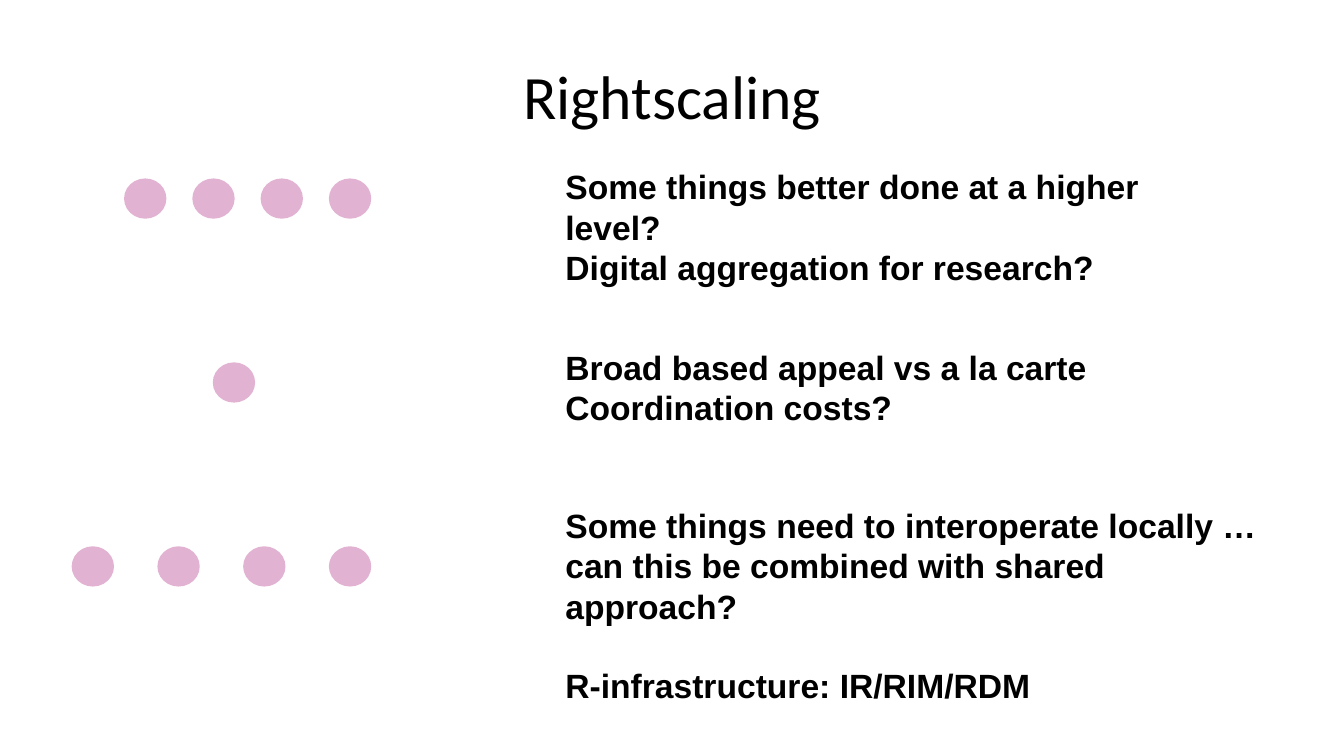
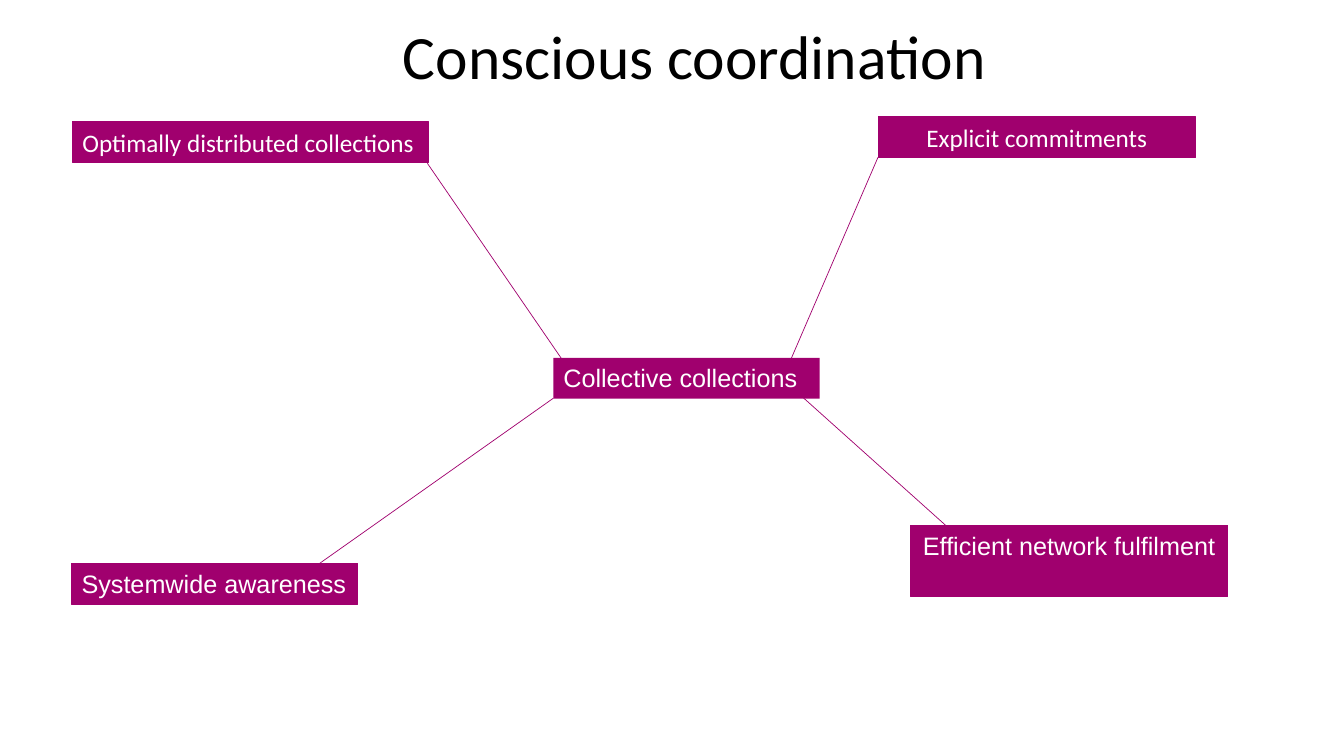
from dataclasses import dataclass

from lxml.etree import SubElement
from pptx import Presentation
from pptx.dml.color import RGBColor
from pptx.enum.shapes import MSO_CONNECTOR as Connector, MSO_SHAPE as Preset
from pptx.enum.text import MSO_ANCHOR as Anchor, MSO_AUTO_SIZE as AutoSize, PP_ALIGN as Align
from pptx.oxml.ns import qn
from pptx.slide import Slide
from pptx.util import Inches, Pt

# Shared look
WIDTH, HEIGHT = Inches(13.33), Inches(7.5)
PURPLE, BLACK, WHITE = "A0006E", "000000", "FFFFFF"
TITLE_FORMAT = {"name": "Calibri", "size": Pt(44)}
BODY_FORMAT = {"name": "Arial", "size": Pt(24), "bold": True}
LABEL_SIZE = Pt(18)
TITLE_SIZE = (86.25, 19.33)
DOT_SIZE = (3.15, 5.33)
DOT_OPACITY = 30
BODY_LEFT = 41.33
BLOCK_GAP = Pt(28)


# Content records: lengths are percentages of the slide's width and height
@dataclass(frozen=True)
class DotRow:
    left: float
    count: int
    pitch: float = 0


@dataclass(frozen=True)
class Question:
    top: float
    width: float
    height: float
    lines: tuple[str, ...]
    last_line_gap: Pt = Pt(0)


@dataclass(frozen=True)
class Label:
    text: str
    left: float
    top: float
    width: float
    height: float = 5.4
    font: str = "Arial"
    centred: bool = False
    outlined: bool = True


@dataclass(frozen=True)
class Spoke:
    start: tuple[float, float]
    end: tuple[float, float]


DOT_TOP, DOT_ROW_PITCH = 23.6, 24.33
DOT_ROWS = (DotRow(9.23, 4, 5.08), DotRow(15.83, 1), DotRow(5.33, 4, 6.38))

QUESTIONS = (
    Question(21.33, 50, 21.6, ("Some things better done at a higher level?",
                               "Digital aggregation for research?")),
    Question(45.2, 50, 16.13, ("Broad based appeal vs a la carte", "Coordination costs?")),
    Question(66.13, 55, 28.27, ("Some things need to interoperate locally … can this be "
                                "combined with shared approach?",
                                "R-infrastructure: IR/RIM/RDM"), BLOCK_GAP),
)

LABELS = (
    Label("Explicit commitments", 65.33, 15.47, 23.63, font="Calibri", centred=True),
    Label("Optimally distributed collections", 5.4, 16.13, 26.48, font="Calibri"),
    Label("Systemwide awareness", 5.33, 74.53, 21.3),
    Label("Efficient network fulfilment", 67.73, 69.47, 23.63, 9.47, centred=True),
    Label("Collective collections", 41.18, 47.33, 19.8, outlined=False),
)

SPOKES = (
    Spoke((31.8, 21.6), (42.15, 48.4)),
    Spoke((65.33, 20.8), (58.8, 47.73)),
    Spoke((41.18, 52.67), (23.78, 74.53)),
    Spoke((58.8, 51.07), (70.35, 69.47)),
)


def colour(hex_code: str) -> RGBColor:
    return RGBColor.from_string(hex_code)


def place(*shares: float) -> list[int]:
    """Turn alternating width and height percentages into lengths."""
    return [round(share * (HEIGHT if i % 2 else WIDTH) / 100)
            for i, share in enumerate(shares)]


def apply_format(target, values: dict) -> None:
    for attribute, value in values.items():
        setattr(target, attribute, value)


def write(paragraph, text: str, font_format: dict, text_colour: str) -> None:
    run = paragraph.add_run()
    run.text = text
    apply_format(run.font, font_format)
    run.font.color.rgb = colour(text_colour)


def add_title(slide: Slide, text: str, left: float, top: float) -> None:
    frame = slide.shapes.add_textbox(*place(left, top, *TITLE_SIZE)).text_frame
    apply_format(frame, {"word_wrap": True, "vertical_anchor": Anchor.MIDDLE})
    heading = frame.paragraphs[0]
    apply_format(heading, {"alignment": Align.CENTER, "line_spacing": 0.9})
    write(heading, text, TITLE_FORMAT, BLACK)


def add_filled(slide: Slide, preset: Preset, *box: float):
    shape = slide.shapes.add_shape(preset, *place(*box))
    shape.shadow.inherit = False
    shape.fill.solid()
    shape.fill.fore_color.rgb = colour(PURPLE)
    shape.line.fill.background()
    return shape


def add_dot_row(slide: Slide, row: DotRow, top: float) -> None:
    for i in range(row.count):
        dot = add_filled(slide, Preset.OVAL, row.left + i * row.pitch, top, *DOT_SIZE)
        tint = dot.fill._xPr.find(qn("a:solidFill"))[0]
        SubElement(tint, qn("a:alpha"), val=str(DOT_OPACITY * 1000))


def add_question(slide: Slide, question: Question) -> None:
    box = place(BODY_LEFT, question.top, question.width, question.height)
    frame = slide.shapes.add_textbox(*box).text_frame
    frame.word_wrap = True
    for i, line in enumerate(question.lines):
        paragraph = frame.add_paragraph() if i else frame.paragraphs[0]
        write(paragraph, line, BODY_FORMAT, BLACK)
    paragraph.space_before = question.last_line_gap


def add_label(slide: Slide, label: Label) -> None:
    shape = add_filled(slide, Preset.RECTANGLE,
                       label.left, label.top, label.width, label.height)
    if label.outlined:
        shape.line.color.rgb = colour(PURPLE)
        shape.line.width = Pt(0.75)
    frame = shape.text_frame
    apply_format(frame, {"word_wrap": label.centred, "vertical_anchor": Anchor.TOP,
                         "auto_size": AutoSize.SHAPE_TO_FIT_TEXT})
    paragraph = frame.paragraphs[0]
    paragraph.alignment = Align.CENTER if label.centred else Align.LEFT
    write(paragraph, label.text, {"name": label.font, "size": LABEL_SIZE}, WHITE)


def add_spoke(slide: Slide, spoke: Spoke) -> None:
    line = slide.shapes.add_connector(Connector.STRAIGHT, *place(*spoke.start, *spoke.end))
    line.line.color.rgb = colour(PURPLE)
    line.line.width = Pt(0.5)
    SubElement(line._element.spPr, qn("a:effectLst"))


def main() -> None:
    deck = Presentation()
    apply_format(deck, {"slide_width": WIDTH, "slide_height": HEIGHT})
    blank = deck.slide_layouts[6]

    # Rightscaling: rows of dots beside their questions
    rightscaling = deck.slides.add_slide(blank)
    add_title(rightscaling, "Rightscaling", 6.9, 3.47)
    for i, row in enumerate(DOT_ROWS):
        add_dot_row(rightscaling, row, DOT_TOP + i * DOT_ROW_PITCH)
    for question in QUESTIONS:
        add_question(rightscaling, question)

    # Conscious coordination: hub with four spokes
    coordination = deck.slides.add_slide(blank)
    add_title(coordination, "Conscious coordination", 8.55, -1.73)
    for spoke in SPOKES:
        add_spoke(coordination, spoke)
    for label in LABELS:
        add_label(coordination, label)

    deck.save("out.pptx")


if __name__ == "__main__":
    main()
